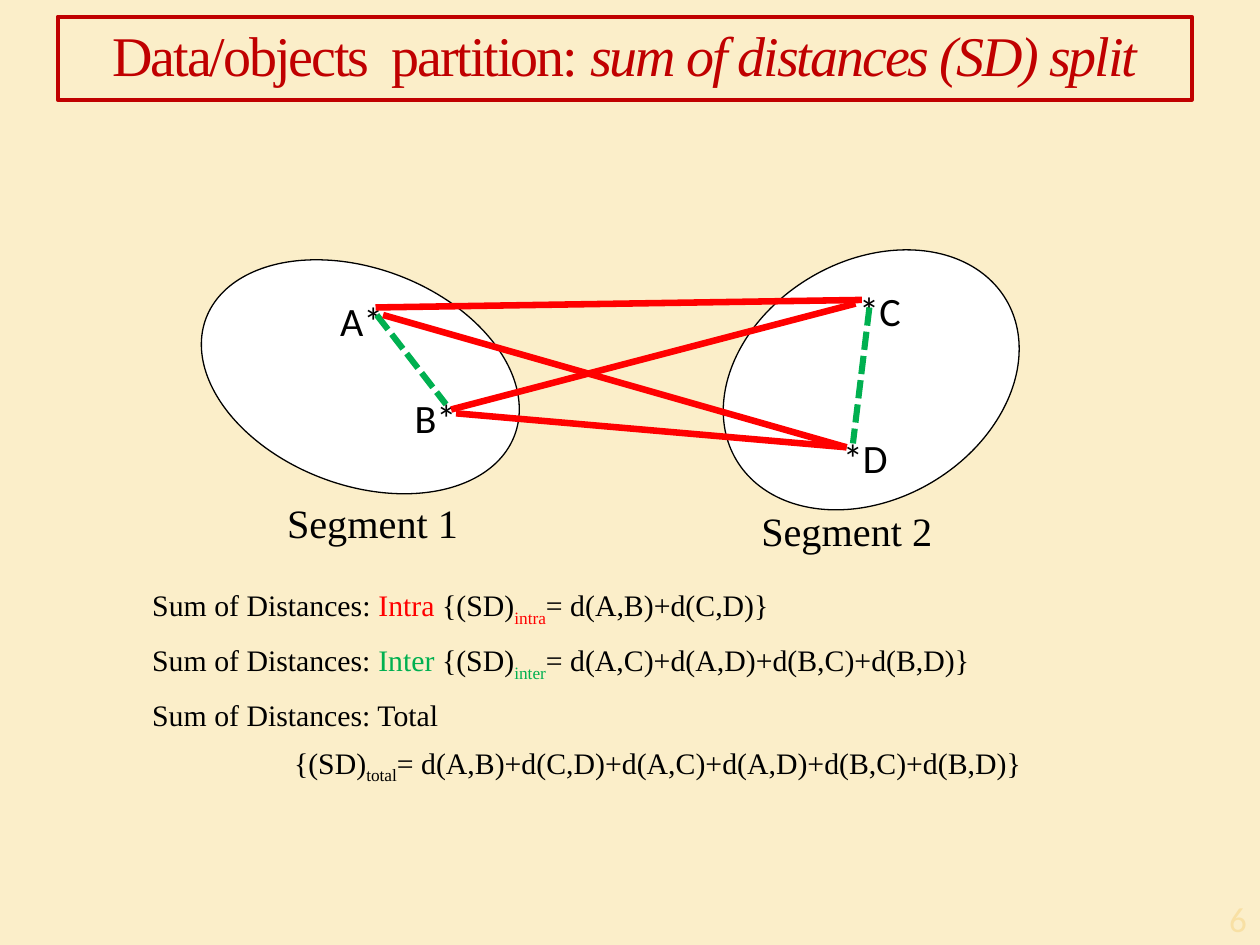
from lxml.etree import SubElement
from pptx import Presentation
from pptx.dml.color import RGBColor
from pptx.enum.dml import MSO_LINE
from pptx.enum.shapes import MSO_CONNECTOR, MSO_SHAPE
from pptx.enum.text import MSO_ANCHOR, PP_ALIGN
from pptx.oxml.ns import qn
from pptx.util import Pt

COLORS = {name: RGBColor.from_string(value) for name, value in {
    "background": "FBEEC9", "title": "C00000", "black": "000000",
    "white": "FFFFFF", "red": "FF0000", "green": "00B050", "number": "F8E0A4",
}.items()}
SERIF, SANS = "Times New Roman", "Calibri"

presentation = Presentation()
presentation.slide_width, presentation.slide_height = Pt(720), Pt(540)
slide = presentation.slides.add_slide(presentation.slide_layouts[5])
slide.background.fill.solid()
slide.background.fill.fore_color.rgb = COLORS["background"]


def add_text(left, top, width, height, size, font, runs):
    """Add a one-line text box; each run is (text, color, is_subscript)."""
    box = slide.shapes.add_textbox(Pt(left), Pt(top), Pt(width), Pt(height))
    frame = box.text_frame
    frame.word_wrap = False
    frame.margin_left = frame.margin_top = frame.margin_right = frame.margin_bottom = 0
    paragraph = frame.paragraphs[0]
    paragraph.font.size, paragraph.font.name = Pt(size), font
    for text, color, is_subscript in runs:
        run = paragraph.add_run()
        run.text = text
        run.font.color.rgb = COLORS[color]
        if is_subscript:
            run.font._element.set("baseline", "-25000")
    return paragraph


# Title
title = slide.shapes.title
title.left, title.top, title.width, title.height = Pt(33), Pt(9.5), Pt(648), Pt(47.5)
title.line.color.rgb = COLORS["title"]
title.line.width = Pt(2.25)
title.text_frame.vertical_anchor = MSO_ANCHOR.MIDDLE
paragraph = title.text_frame.paragraphs[0]
paragraph.alignment = PP_ALIGN.CENTER
paragraph.line_spacing = 0.9
paragraph.font.size, paragraph.font.name = Pt(32), SERIF
paragraph.font.color.rgb = COLORS["title"]
for text, italic in [("Data/objects  partition: ", False),
                     ("sum of distances (SD) split", True)]:
    run = paragraph.add_run()
    run.text = text
    run.font.italic = italic
    run.font._element.set("spc", "-120")

# Sums of distances
label = "Sum of Distances: "
formulas = [
    (87, 335.5, 358, [(label, "black", False), ("Intra", "red", False),
                      (" {(SD)", "black", False), ("intra", "red", True),
                      ("= d(A,B)+d(C,D)}", "black", False)]),
    (87, 367, 473, [(label, "black", False), ("Inter", "green", False),
                    (" {(SD)", "black", False), ("inter", "green", True),
                    ("= d(A,C)+d(A,D)+d(B,C)+d(B,D)}", "black", False)]),
    (87, 398, 186, [(label + "Total", "black", False)]),
    (168, 425.5, 422, [("{(SD)", "black", False), ("total", "black", True),
                       ("= d(A,B)+d(C,D)+d(A,C)+d(A,D)+d(B,C)+d(B,D)}", "black", False)]),
]
for left, top, width, runs in formulas:
    add_text(left, top, width, 24.5, 17, SERIF, runs)

# Segment ellipses
for left, top, width, height, rotation in [(111.6, 153.4, 188.6, 123.8, 20.8),
                                           (408.2, 149, 179.3, 136.1, 329.3)]:
    ellipse = slide.shapes.add_shape(MSO_SHAPE.OVAL, Pt(left), Pt(top), Pt(width), Pt(height))
    ellipse.rotation = rotation
    ellipse.shadow.inherit = False
    ellipse.fill.solid()
    ellipse.fill.fore_color.rgb = COLORS["white"]
    ellipse.line.color.rgb = COLORS["black"]
    ellipse.line.width = Pt(0)

# Object points
for text, left, top in [("A*", 194.4, 169.2), ("B*", 236.9, 224.6),
                        ("*C", 491, 163.4), ("*D", 481.7, 247.7)]:
    add_text(left, top, 35, 34, 23, SANS, [(text, "black", False)])

# Distances within a segment (green, dashed) and between segments (red)
distances = [
    ("green", 496.8, 175.7, 487.4, 253.4),  # C to D
    ("green", 215.3, 180, 254.9, 231.1),    # A to B
    ("red", 218.9, 180, 483.8, 255.6),      # A to D
    ("red", 260.6, 236.2, 483.8, 255.6),    # B to D
    ("red", 214.6, 175.7, 492.5, 171.4),    # A to C
    ("red", 257.8, 234, 488.9, 173.5),      # B to C
]
for color, *ends in distances:
    connector = slide.shapes.add_connector(MSO_CONNECTOR.STRAIGHT, *map(Pt, ends))
    connector.line.color.rgb = COLORS[color]
    connector.line.width = Pt(3.75)
    if color == "green":
        connector.line.width = Pt(3.5)
        connector.line.dash_style = MSO_LINE.SQUARE_DOT
    SubElement(connector._element.spPr, qn("a:effectLst"))

# Segment names
for text, left, top in [("Segment 1", 164, 285), ("Segment 2", 435, 289.5)]:
    add_text(left, top, 112, 31, 23, SERIF, [(text, "black", False)])

# Slide number
number = add_text(692, 513, 20.5, 25, 20, SANS, [("6", "number", False)])
number.alignment = PP_ALIGN.RIGHT

presentation.save("out.pptx")
